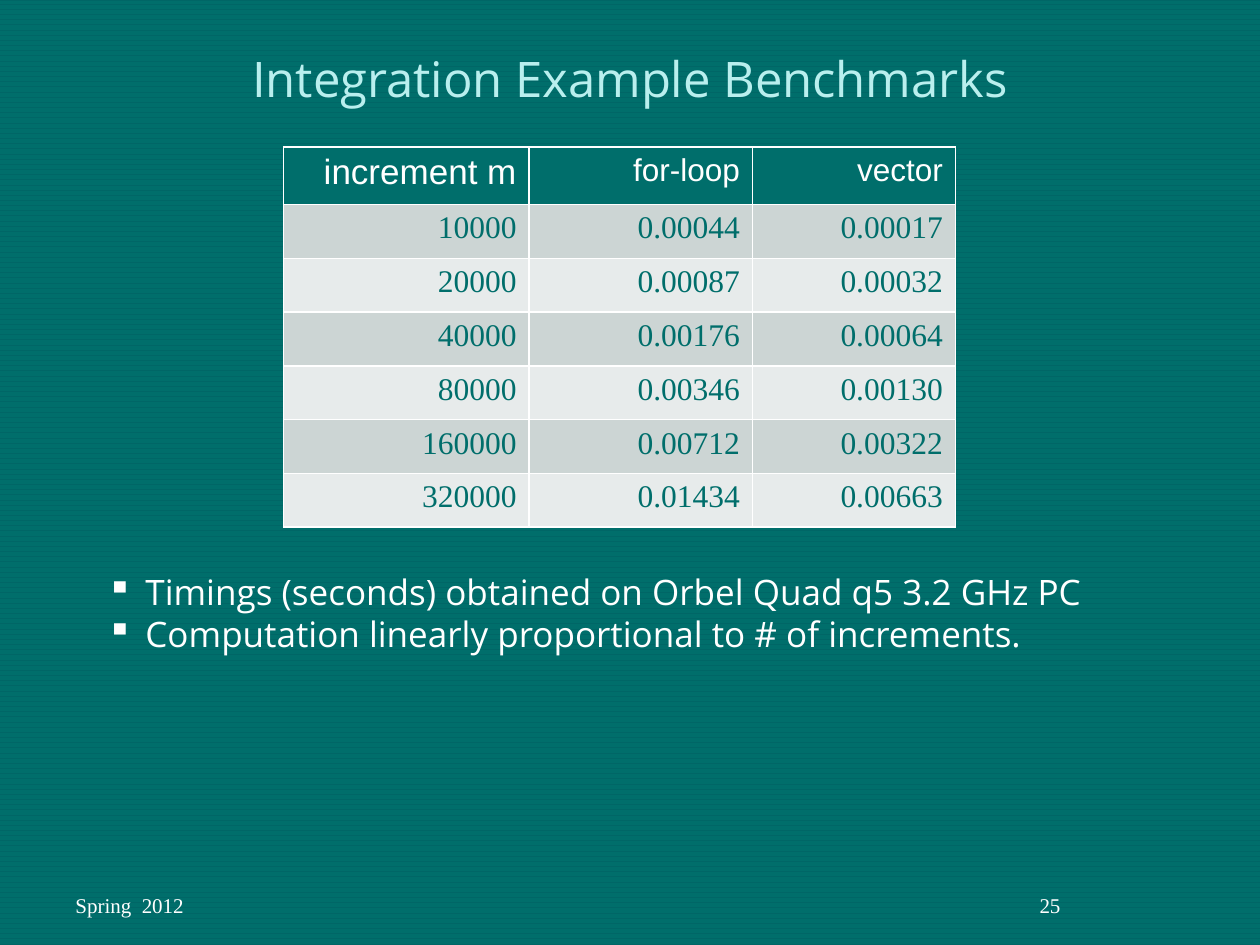
from lxml.etree import SubElement
from pptx import Presentation
from pptx.dml.color import RGBColor
from pptx.enum.dml import MSO_PATTERN
from pptx.enum.text import MSO_ANCHOR as Anchor, PP_ALIGN as Align
from pptx.oxml.ns import qn
from pptx.util import Pt

# Content
TITLE = "Integration Example Benchmarks"
HEADER = ("increment m", "for-loop", "vector")
TIMINGS = [
    ("10000", "0.00044", "0.00017"),
    ("20000", "0.00087", "0.00032"),
    ("40000", "0.00176", "0.00064"),
    ("80000", "0.00346", "0.00130"),
    ("160000", "0.00712", "0.00322"),
    ("320000", "0.01434", "0.00663"),
]
NOTES = [
    "Timings (seconds) obtained on Orbel Quad q5 3.2 GHz PC",
    "Computation linearly proportional to # of increments.",
]
TERM, PAGE_NUMBER = "Spring  2012", "25"

COLORS = {
    "teal": "006E6B", "stripe": "006666", "title": "B9EFEE",
    "white": "FFFFFF", "band_dark": "CCD5D4", "band_light": "E7EBEB",
}
SANS, SERIF, HEAD = "Open Sans", "Times New Roman", "Arial"
COLUMN_WIDTHS = (140.4, 127.6, 116)
HEADER_HEIGHT, ROW_HEIGHT = 32.9, 30.75
BULLET_INDENT = 22


def rgb(name):
    return RGBColor.from_string(COLORS[name])


def write(frame, *lines, font, size, color="white", align=Align.LEFT, bullet=None):
    """Fill a text frame with one paragraph per line."""
    for index, line in enumerate(lines):
        para = frame.paragraphs[0] if index == 0 else frame.add_paragraph()
        para.alignment = align
        if bullet:
            props = para._p.get_or_add_pPr()
            props.set("marL", str(Pt(BULLET_INDENT)))
            props.set("indent", str(-Pt(BULLET_INDENT)))
            SubElement(props, qn("a:buChar"), char=bullet)
        span = para.add_run()
        span.text = line
        span.font.name, span.font.size = font, Pt(size)
        span.font.color.rgb = rgb(color)


def add_text(page, place, *lines, anchor=Anchor.TOP, **style):
    box = page.shapes.add_textbox(*map(Pt, place))
    box.text_frame.word_wrap = True
    box.text_frame.vertical_anchor = anchor
    write(box.text_frame, *lines, **style)


def add_borders(cell, color, width):
    props = cell._tc.get_or_add_tcPr()
    for side in ("lnL", "lnR", "lnT", "lnB"):
        line = SubElement(props, qn(f"a:{side}"), w=str(Pt(width)))
        fill = SubElement(line, qn("a:solidFill"))
        SubElement(fill, qn("a:srgbClr"), val=COLORS[color])


def add_timings(page, left, top):
    rows = [HEADER, *TIMINGS]
    heights = [HEADER_HEIGHT] + [ROW_HEIGHT] * len(TIMINGS)
    table = page.shapes.add_table(
        len(rows), len(HEADER), Pt(left), Pt(top),
        Pt(sum(COLUMN_WIDTHS)), Pt(sum(heights))).table
    table.first_row = table.horz_banding = False
    for column, width in zip(table.columns, COLUMN_WIDTHS):
        column.width = Pt(width)
    for r, values in enumerate(rows):
        table.rows[r].height = Pt(heights[r])
        for c, value in enumerate(values):
            cell = table.cell(r, c)
            add_borders(cell, "white", 1)
            cell.fill.solid()
            if r == 0:
                fill, font, color = "teal", HEAD, "white"
            else:
                fill = "band_dark" if r % 2 else "band_light"
                font, color = SERIF, "teal"
            cell.fill.fore_color.rgb = rgb(fill)
            write(cell.text_frame, value, font=font, color=color,
                  size=20 if r == c == 0 else 18, align=Align.RIGHT)


deck = Presentation()
deck.slide_width, deck.slide_height = Pt(720), Pt(540)
page = deck.slides.add_slide(deck.slide_layouts[6])

# Striped background
background = page.background.fill
background.patterned()
background.pattern = MSO_PATTERN.DARK_HORIZONTAL
background.fore_color.rgb = rgb("teal")
background.back_color.rgb = rgb("stripe")

# Title, table and notes
add_text(page, (60, 24, 600, 60), TITLE, font=SANS, size=28,
         color="title", align=Align.CENTER)
add_timings(page, 162, 84)
add_text(page, (54, 322.5, 630, 55.5), *NOTES, font=SANS, size=20, bullet="▪")

# Footer
for left, text, align in ((36, TERM, Align.LEFT), (516, PAGE_NUMBER, Align.CENTER)):
    add_text(page, (left, 492, 168, 36), text, anchor=Anchor.BOTTOM,
             font=SERIF, size=12, align=align)

deck.save("out.pptx")
